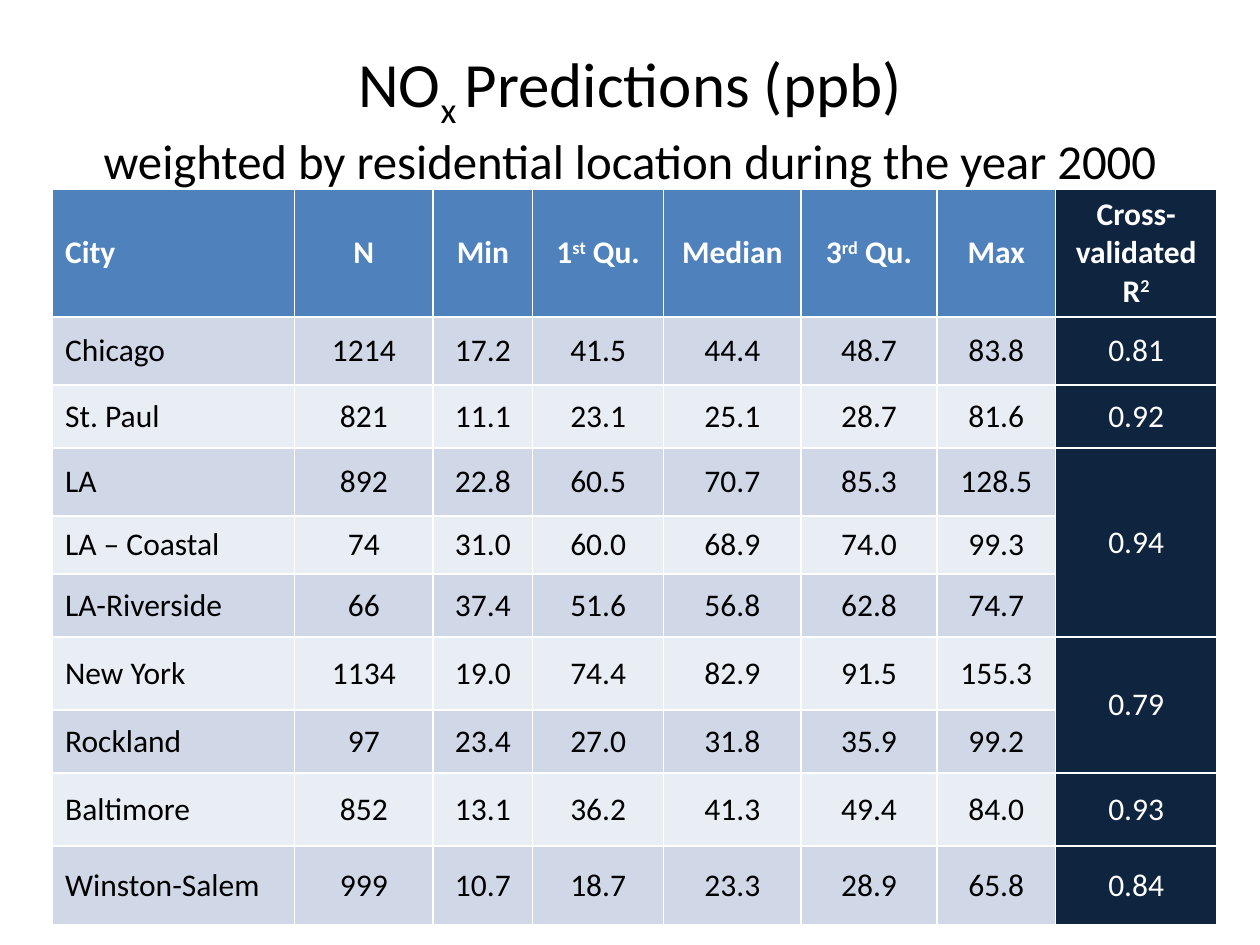
import pptx
import pptx.dml.color
import pptx.enum.text
import pptx.util

Cm = pptx.util.Cm
Pt = pptx.util.Pt
PP_ALIGN = pptx.enum.text.PP_ALIGN
MIDDLE = pptx.enum.text.MSO_ANCHOR.MIDDLE

COLORS = {
    "header": "4F81BD",
    "validation": "0F243E",
    "odd_row": "D0D8E8",
    "even_row": "E9EDF4",
    "light_text": "FFFFFF",
    "dark_text": "000000",
}

# Text pieces are (text, baseline shift) pairs where a shift is needed
HEADER = [
    "City", "N", "Min",
    [("1", 0), ("st", 30000), (" Qu.", 0)],
    "Median",
    [("3", 0), ("rd", 30000), (" Qu.", 0)],
    "Max",
    [("Cross-validated R", 0), ("2", 30000)],
]
CITIES = [
    ["Chicago", "1214", "17.2", "41.5", "44.4", "48.7", "83.8", "0.81"],
    ["St. Paul", "821", "11.1", "23.1", "25.1", "28.7", "81.6", "0.92"],
    ["LA", "892", "22.8", "60.5", "70.7", "85.3", "128.5", "0.94"],
    ["LA – Coastal", "74", "31.0", "60.0", "68.9", "74.0", "99.3", ""],
    ["LA-Riverside", "66", "37.4", "51.6", "56.8", "62.8", "74.7", ""],
    ["New York", "1134", "19.0", "74.4", "82.9", "91.5", "155.3", "0.79"],
    ["Rockland", "97", "23.4", "27.0", "31.8", "35.9", "99.2", ""],
    ["Baltimore", "852", "13.1", "36.2", "41.3", "49.4", "84.0", "0.93"],
    ["Winston-Salem", "999", "10.7", "18.7", "23.3", "28.9", "65.8", "0.84"],
]
COLUMN_WIDTHS = [4.88, 2.79, 2.01, 2.64, 2.77, 2.74, 2.39, 3.25]
ROW_HEIGHTS = [1.6, 1.37, 1.27, 1.37, 1.17, 1.27, 1.47, 1.27, 1.47, 1.6]
SHARED_VALIDATION_ROWS = [(3, 5), (6, 7)]


class SlideBuilder:
    """Holds the text style and the slide being filled."""

    def __init__(self, slide, font_name="Calibri"):
        self.slide = slide
        self.font_name = font_name

    def color(self, name):
        return pptx.dml.color.RGBColor.from_string(COLORS[name])

    def style(self, paragraph, size, color, bold=False, alignment=PP_ALIGN.CENTER):
        paragraph.alignment = alignment
        font = paragraph.font
        font.name = self.font_name
        font.size = Pt(size)
        font.bold = bold
        font.color.rgb = self.color(color)

    def add_runs(self, paragraph, pieces):
        if isinstance(pieces, str):
            pieces = [(pieces, 0)]
        for text, baseline in pieces:
            run = paragraph.add_run()
            run.text = text
            if baseline:
                run.font._element.set("baseline", str(baseline))

    def title(self, pieces, subtitle, left, top, width, height):
        shape = self.slide.shapes.title
        shape.left, shape.top = Cm(left), Cm(top)
        shape.width, shape.height = Cm(width), Cm(height)
        shape.text_frame.vertical_anchor = MIDDLE
        paragraph = shape.text_frame.paragraphs[0]
        self.style(paragraph, 36, "dark_text")
        self.add_runs(paragraph, pieces)
        paragraph.add_line_break()
        run = paragraph.add_run()
        run.text = subtitle
        run.font.size = Pt(27.9)

    def cell(self, cell, pieces, fill, **text_style):
        cell.fill.solid()
        cell.fill.fore_color.rgb = self.color(fill)
        cell.vertical_anchor = MIDDLE
        paragraph = cell.text_frame.paragraphs[0]
        self.style(paragraph, 18, **text_style)
        if pieces:
            self.add_runs(paragraph, pieces)

    def table(self, rows, left, top, width, height):
        frame = self.slide.shapes.add_table(
            len(rows), len(rows[0]), Cm(left), Cm(top), Cm(width), Cm(height))
        table = frame.table
        for column, column_width in zip(table.columns, COLUMN_WIDTHS):
            column.width = Cm(column_width)
        for row, row_height in zip(table.rows, ROW_HEIGHTS):
            row.height = Cm(row_height)

        last_column = len(rows[0]) - 1
        for row_index, row in enumerate(rows):
            is_header = row_index == 0
            band = "odd_row" if row_index % 2 else "even_row"
            for column_index, pieces in enumerate(row):
                is_validation = column_index == last_column
                fill = "header" if is_header else band
                self.cell(
                    table.cell(row_index, column_index), pieces,
                    fill="validation" if is_validation else fill,
                    color="light_text" if is_header or is_validation else "dark_text",
                    bold=is_header,
                    alignment=PP_ALIGN.CENTER if column_index else PP_ALIGN.LEFT)

        for first, last in SHARED_VALIDATION_ROWS:
            table.cell(first, last_column).merge(table.cell(last, last_column))


def main():
    presentation = pptx.Presentation()
    presentation.slide_width = Cm(25.4)
    presentation.slide_height = Cm(19.05)
    slide = presentation.slides.add_slide(presentation.slide_layouts[5])
    builder = SlideBuilder(slide)

    # Predictions by city
    builder.table([HEADER] + CITIES, 1.06, 3.81, 23.47, 14.8)

    # Title, in front of the table
    builder.title(
        [("NO", 0), ("x ", -25000), ("Predictions (ppb)", 0)],
        "weighted by residential location during the year 2000",
        1.27, 0.76, 22.86, 3.18)
    slide.shapes.element.append(slide.shapes.title.element)

    presentation.save("out.pptx")


if __name__ == "__main__":
    main()
